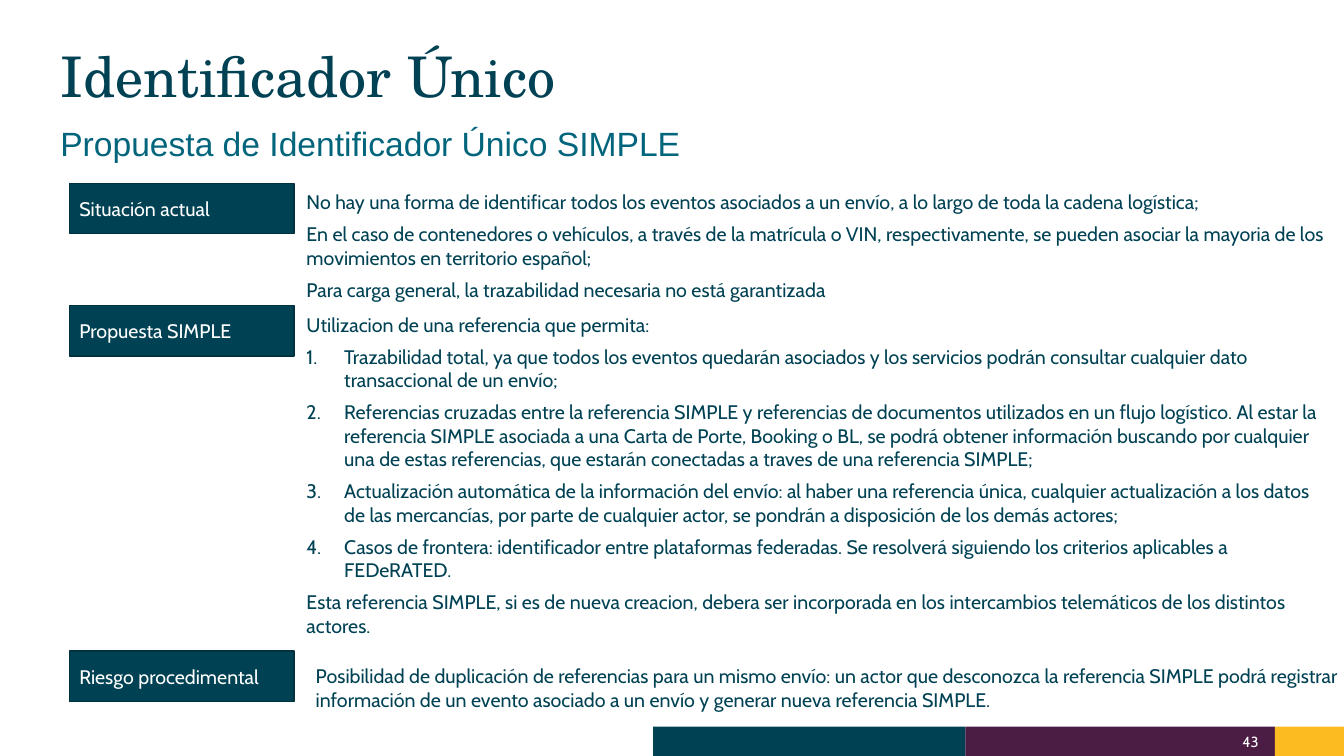
import pptx
import pptx.util
import pptx.dml.color
import pptx.enum.shapes
import pptx.enum.text
import pptx.oxml.ns
import lxml.etree

Cm = pptx.util.Cm
Pt = pptx.util.Pt
ANCHOR = pptx.enum.text.MSO_ANCHOR
ALIGN = pptx.enum.text.PP_ALIGN
COLORS = {
    "teal": "004254",
    "edge": "00313E",
    "subtitle": "03657C",
    "purple": "4B1C44",
    "yellow": "FBBB21",
    "white": "FFFFFF",
}


def write(para, text, size, font, color, align=ALIGN.LEFT):
    para.alignment = align
    para.space_before = Pt(0)
    span = para.add_run()
    span.text = text
    span.font.size = Pt(size)
    span.font.name = font
    span.font.bold = False
    span.font.color.rgb = pptx.dml.color.RGBColor.from_string(COLORS[color])


def add_block(left, top, width, height, fill, line=None):
    block = page.shapes.add_shape(
        pptx.enum.shapes.MSO_SHAPE.RECTANGLE, Cm(left), Cm(top), Cm(width), Cm(height)
    )
    block.shadow.inherit = False
    block.fill.solid()
    block.fill.fore_color.rgb = pptx.dml.color.RGBColor.from_string(COLORS[fill])
    if line:
        block.line.color.rgb = pptx.dml.color.RGBColor.from_string(COLORS[line])
        block.line.width = Pt(1)
    else:
        block.line.fill.background()
    return block


deck = pptx.Presentation()
deck.slide_width = Cm(33.87)
deck.slide_height = Cm(19.05)
page = deck.slides.add_slide(deck.slide_layouts.get_by_name("Comparison"))

bar_edges = [16.46, 24.33, 32.13, 33.87]
for start, end, fill in zip(bar_edges, bar_edges[1:], ["teal", "purple", "yellow"]):
    add_block(start, 18.31, end - start, 0.74, fill)

number_box = page.shapes.add_textbox(Cm(28.14), Cm(18.49), Cm(3.58), Cm(0.38))

headings = [
    (0, "Identificador Único", 1.32, 1.8, 40, 40, "TeX Gyre Schola", "teal"),
    (1, "Propuesta de Identificador Único SIMPLE", 3.12, 1.3, 24, 28, "Arial", "subtitle"),
]
for index, text, top, height, size, spacing, font, color in headings:
    box = page.placeholders[index]
    box.left, box.top, box.width, box.height = Cm(1.52), Cm(top), Cm(29.41), Cm(height)
    para = box.text_frame.paragraphs[0]
    para.line_spacing = Pt(spacing)
    write(para, text, size, font, color)

for box in [number_box, page.placeholders[0], page.placeholders[1]]:
    frame = box.text_frame
    frame.margin_left = frame.margin_top = frame.margin_right = frame.margin_bottom = 0
    frame.word_wrap = True
    frame.auto_size = pptx.enum.text.MSO_AUTO_SIZE.NONE
    frame.vertical_anchor = ANCHOR.TOP
number_box.text_frame.vertical_anchor = ANCHOR.MIDDLE
write(number_box.text_frame.paragraphs[0], "43", 10.5, "Cabin", "white", ALIGN.RIGHT)

sections = [
    ("Situación actual", 4.62, 7.19, 4.67, 3.07, [
        ("plain", "No hay una forma de identificar todos los eventos asociados a un envío, a lo largo de toda la cadena logística;"),
        ("plain", "En el caso de contenedores o vehículos, a través de la matrícula o VIN, respectivamente, se pueden asociar la mayoria de los movimientos en territorio español;"),
        ("plain", "Para carga general, la trazabilidad necesaria no está garantizada"),
    ]),
    ("Propuesta SIMPLE", 7.7, 7.19, 7.75, 7.32, [
        ("plain", "Utilizacion de una referencia que permita:"),
        ("numbered", "Trazabilidad total, ya que todos los eventos quedarán asociados y los servicios podrán consultar cualquier dato transaccional de un envío;"),
        ("numbered", "Referencias cruzadas entre la referencia SIMPLE y referencias de documentos utilizados en un flujo logístico. Al estar la referencia SIMPLE asociada a una Carta de Porte, Booking o BL, se podrá obtener información buscando por cualquier una de estas referencias, que estarán conectadas a traves de una referencia SIMPLE;"),
        ("numbered", "Actualización automática de la información del envío: al haber una referencia única, cualquier actualización a los datos de las mercancías, por parte de cualquier actor, se pondrán a disposición de los demás actores;"),
        ("numbered", "Casos de frontera: identificador entre plataformas federadas. Se resolverá siguiendo los criterios aplicables a FEDeRATED."),
        ("plain", "Esta referencia SIMPLE, si es de nueva creacion, debera ser incorporada en los intercambios telemáticos de los distintos actores."),
    ]),
    ("Riesgo procedimental", 16.41, 7.42, 16.61, 1.45, [
        ("plain", "Posibilidad de duplicación de referencias para un mismo envío: un actor que desconozca la referencia SIMPLE podrá registrar información de un evento asociado a un envío y generar nueva referencia SIMPLE."),
    ]),
]
for index, (name, label_top, left, top, height, items) in enumerate(sections, 2):
    label = add_block(1.75, label_top, 5.66, 1.27, "teal", "edge")
    label.text_frame.vertical_anchor = ANCHOR.MIDDLE
    write(label.text_frame.paragraphs[0], name, 14, "Cabin", "white")

    box = page.placeholders[index]
    box.left, box.top, box.width, box.height = Cm(left), Cm(top), Cm(26.67), Cm(height)
    frame = box.text_frame
    frame.word_wrap = True
    frame.auto_size = pptx.enum.text.MSO_AUTO_SIZE.NONE
    frame.vertical_anchor = ANCHOR.TOP
    for position, (kind, text) in enumerate(items):
        para = frame.add_paragraph() if position else frame.paragraphs[0]
        properties = para._p.get_or_add_pPr()
        if kind == "numbered":
            margin, indent = 1.23, -0.95
            bullet = lxml.etree.SubElement(properties, pptx.oxml.ns.qn("a:buAutoNum"))
            bullet.set("type", "arabicPeriod")
        else:
            margin, indent = 0.28, 0
            lxml.etree.SubElement(properties, pptx.oxml.ns.qn("a:buNone"))
        properties.set("marL", str(Cm(margin)))
        properties.set("indent", str(Cm(indent)))
        para.space_after = Pt(6)
        write(para, text, 14, "Cabin", "teal")

deck.save("out.pptx")
